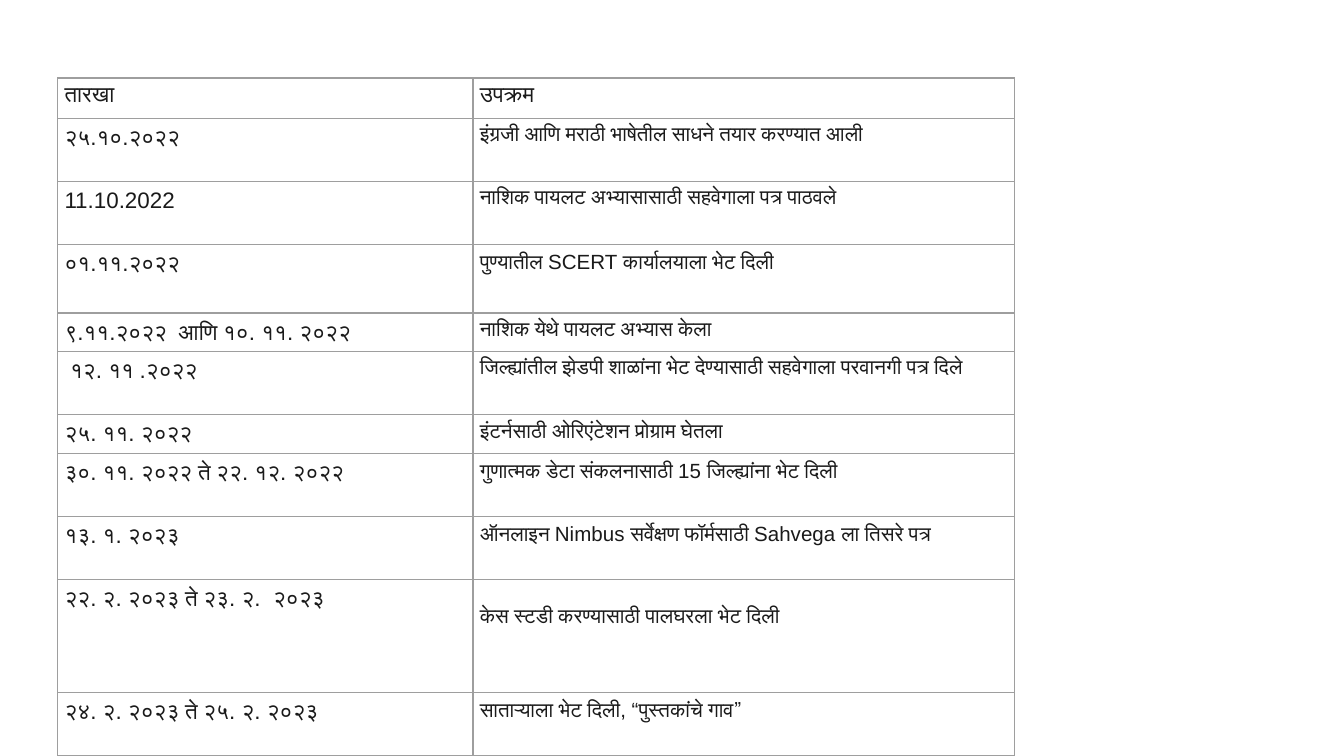
from dataclasses import dataclass

from lxml import etree
from pptx import Presentation
from pptx import util as u
from pptx.dml.color import RGBColor
from pptx.enum import text
from pptx.oxml import ns

SCALE = 4572


@dataclass(frozen=True)
class Theme:
    font: str = "Arial"
    ink: str = "1A1A1A"
    border: str = "9E9E9E"
    border_width: float = 0.75
    date_size: int = 12
    activity_size: int = 11
    inset: int = 10


THEME = Theme()
FRAME_SIDE = 656
COLUMN_WIDTHS = (618, 806)
HEADER = ("तारखा", "उपक्रम")
HEADER_HEIGHT = 60
SHORT, TALL = 56, 94

ACTIVITIES = (
    (TALL, "२५.१०.२०२२", "इंग्रजी आणि मराठी भाषेतील साधने तयार करण्यात आली"),
    (TALL, "11.10.2022", "नाशिक पायलट अभ्यासासाठी सहवेगाला पत्र पाठवले"),
    (102, "०१.११.२०२२", "पुण्यातील SCERT कार्यालयाला भेट दिली"),
    (SHORT, "९.११.२०२२  आणि १०. ११. २०२२", "नाशिक येथे पायलट अभ्यास केला"),
    (TALL, " १२. ११ .२०२२", "जिल्ह्यांतील झेडपी शाळांना भेट देण्यासाठी सहवेगाला परवानगी पत्र दिले"),
    (SHORT, "२५. ११. २०२२", "इंटर्नसाठी ओरिएंटेशन प्रोग्राम घेतला"),
    (TALL, "३०. ११. २०२२ ते २२. १२. २०२२", "गुणात्मक डेटा संकलनासाठी 15 जिल्ह्यांना भेट दिली"),
    (TALL, "१३. १. २०२३", "ऑनलाइन Nimbus सर्वेक्षण फॉर्मसाठी Sahvega ला तिसरे पत्र"),
    (168, "२२. २. २०२३ ते २३. २.  २०२३", "\vकेस स्टडी करण्यासाठी पालघरला भेट दिली"),
    (TALL, "२४. २. २०२३ ते २५. २. २०२३", "साताऱ्याला भेट दिली, “पुस्तकांचे गाव”"),
)


def px(length):
    return u.Emu(length * SCALE)


def add_borders(cell):
    properties = cell._tc.get_or_add_tcPr()
    for side in ("lnL", "lnR", "lnT", "lnB"):
        line = etree.SubElement(properties, ns.qn(f"a:{side}"), w=str(u.Pt(THEME.border_width)))
        fill = etree.SubElement(line, ns.qn("a:solidFill"))
        etree.SubElement(fill, ns.qn("a:srgbClr"), val=THEME.border)


def style_text(cell, size):
    para = cell.text_frame.paragraphs[0]
    for span in para.runs:
        span.font.size = u.Pt(size)
        span.font.name = THEME.font
        span.font.color.rgb = RGBColor.from_string(THEME.ink)
    for line_break in para._p.findall(ns.qn("a:br")):
        etree.SubElement(line_break, ns.qn("a:rPr"), sz=str(size * 100))


def fill_cell(cell, wording, size):
    cell.text_frame.text = wording
    cell.vertical_anchor = text.MSO_ANCHOR.TOP
    cell.margin_left = cell.margin_right = px(THEME.inset)
    cell.margin_top = cell.margin_bottom = px(THEME.inset)
    style_text(cell, size)
    add_borders(cell)
    cell.fill.background()


def add_schedule(page, left, top):
    rows = ((HEADER_HEIGHT, *HEADER), *ACTIVITIES)
    frame = page.shapes.add_table(
        len(rows), len(COLUMN_WIDTHS), px(left), px(top), px(FRAME_SIDE), px(FRAME_SIDE)
    )
    table = frame.table
    table.first_row = table.horz_banding = False
    for column, width in zip(table.columns, COLUMN_WIDTHS):
        column.width = px(width)
    for index, (row_height, date, activity) in enumerate(rows):
        table.rows[index].height = px(row_height)
        activity_size = THEME.activity_size if index else THEME.date_size
        fill_cell(table.cell(index, 0), date, THEME.date_size)
        fill_cell(table.cell(index, 1), activity, activity_size)
    frame.width = frame.height = px(FRAME_SIDE)


def main():
    deck = Presentation()
    deck.slide_width, deck.slide_height = px(2000), px(1125)
    page = deck.slides.add_slide(deck.slide_layouts[6])
    add_schedule(page, 86, 116)
    deck.save("out.pptx")


if __name__ == "__main__":
    main()
